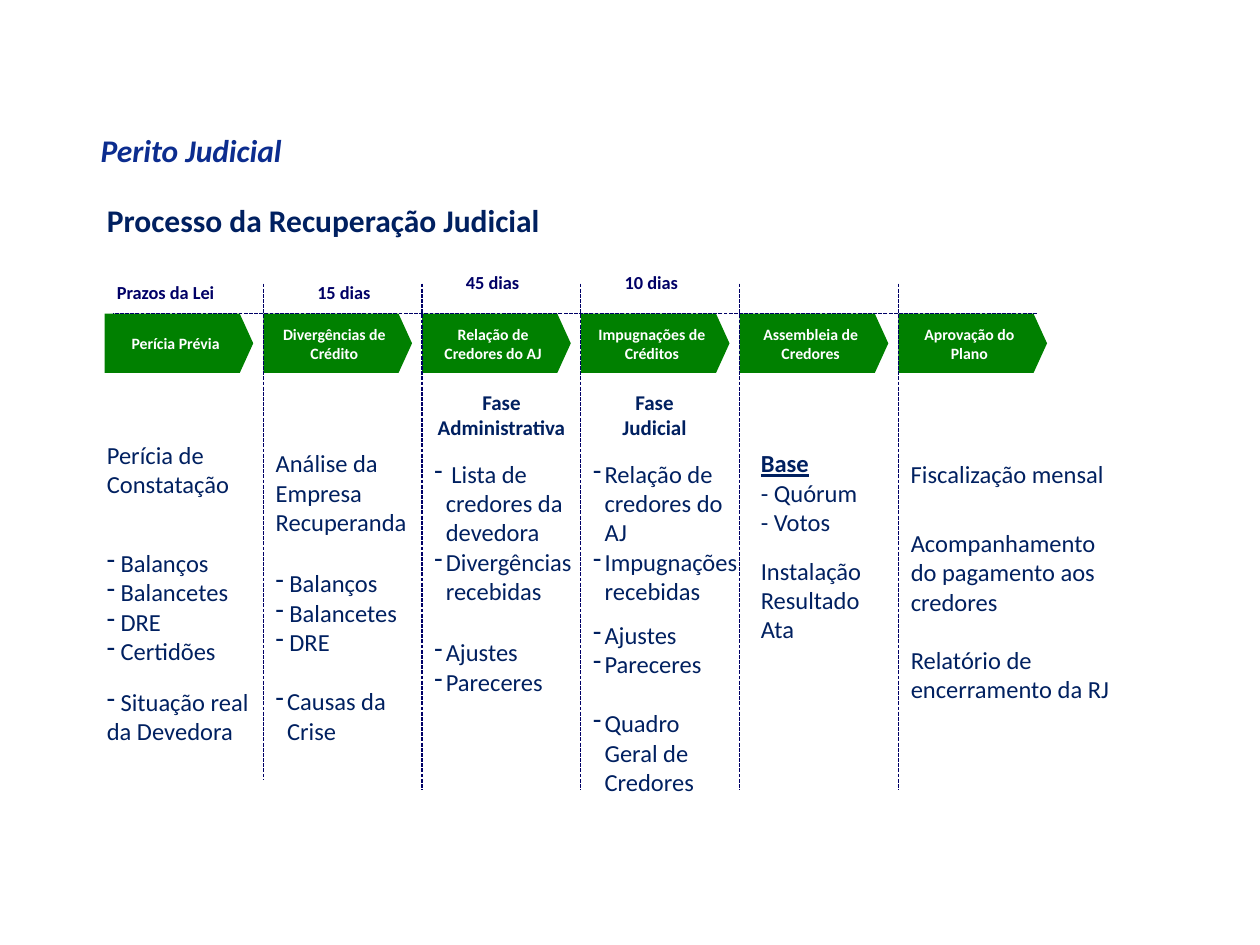
from pptx import Presentation
from pptx.util import Pt
from pptx.dml.color import RGBColor
from pptx.enum.dml import MSO_LINE
from pptx.enum.shapes import MSO_CONNECTOR, MSO_SHAPE
from pptx.enum.text import MSO_ANCHOR, MSO_AUTO_SIZE, PP_ALIGN
from pptx.oxml.ns import qn
from lxml.etree import SubElement

PX = 9144  # 100 px to the inch
STEP = 126
NAVY, DARK, GREEN = "002060", "000066", "008000"

HEAD = dict(size=Pt(18), bold=True)
DAYS = dict(size=Pt(10.5), bold=True)
STAGE = dict(size=Pt(9), bold=True)
PHASE = dict(size=Pt(12), bold=True)
BODY = dict(size=Pt(14))
FLAT, HANG = 0, 9  # hanging indent of dash lists

STEPS = ["Perícia Prévia", "Divergências de Crédito", "Relação de Credores do AJ",
         "Impugnações de Créditos", "Assembleia de Credores", "Aprovação do Plano"]

# x, y, width, height, text
TERMS = [(0, 0, 99, 28, "Prazos da Lei"), (159, 0, 63, 28, "15 dias"),
         (277, -8, 63, 28, "45 dias"), (403, -8, 63, 28, "10 dias")]
PHASES = [(244, 0, 142, 50, "Fase Administrativa"), (393, 0, 87, 50, "Fase Judicial")]

# x, y, width, height, lines, dash indent, line after a gap
NOTES = [
    (-8, 0, 126, 81, ["Perícia de Constatação"], None, None),
    (-8, 86, 134, 104, [" Balanços", " Balancetes", " DRE", " Certidões"], FLAT, None),
    (-8, 196, 134, 81, [" Situação real da Devedora"], FLAT, None),
    (126, 7, 126, 81, ["Análise da Empresa Recuperanda"], None, None),
    (126, 102, 134, 151, [" Balanços", " Balancetes", " DRE", "Causas da Crise"], FLAT, 3),
    (252, 15, 134, 128, [" Lista de credores da devedora", "Divergências recebidas"], HANG, None),
    (252, 157, 134, 57, ["Ajustes", "Pareceres"], HANG, None),
    (378, 15, 142, 128, ["Relação de credores do AJ", "Impugnações recebidas"], HANG, None),
    (378, 143, 134, 151, ["Ajustes", "Pareceres", "Quadro Geral de Credores"], HANG, 2),
    (511, 7, 126, 81, ["Base", "- Quórum", "- Votos"], None, None),
    (511, 92, 126, 81, ["Instalação", "Resultado", "Ata"], None, None),
    (630, 15, 173, 34, ["Fiscalização mensal"], None, None),
    (630, 70, 181, 81, ["Acompanhamento do pagamento aos credores"], None, None),
    (630, 163, 181, 57, ["Relatório de encerramento da RJ"], None, None),
]


def paint(hue):
    return RGBColor.from_string(hue)


def style(font, form, hue):
    for key, val in dict(name="Calibri", **form).items():
        setattr(font, key, val)
    font.color.rgb = paint(hue)


def dash(par, ind):
    prop = par._p.get_or_add_pPr()
    prop.set("marL", str(ind * PX))
    prop.set("indent", str(-ind * PX))
    SubElement(prop, qn("a:buChar")).set("char", "-")


def write(frame, lines, form, hue, align=PP_ALIGN.LEFT, ind=None, gap=None):
    for i, line in enumerate(lines):
        par = frame.add_paragraph() if i else frame.paragraphs[0]
        par.alignment = align
        if i and i == gap:
            par.space_before = Pt(17)
        if ind is not None:
            # the line after a gap always hangs
            dash(par, HANG if i == gap else ind)
        run = par.add_run()
        run.text = line
        style(run.font, form, hue)


def label(slide, box, lines, form, hue, wrap=True, **more):
    frame = slide.shapes.add_textbox(*[n * PX for n in box]).text_frame
    frame.word_wrap = wrap
    frame.auto_size = MSO_AUTO_SIZE.SHAPE_TO_FIT_TEXT
    write(frame, lines, form, hue, **more)
    return frame


def rule(slide, *ends):
    line = slide.shapes.add_connector(MSO_CONNECTOR.STRAIGHT, *[n * PX for n in ends])
    line.line.color.rgb = paint(DARK)
    line.line.width = Pt(0.75)
    line.line.dash_style = MSO_LINE.SQUARE_DOT
    SubElement(line._element.spPr, qn("a:effectLst"))


def titles(slide, x, y):
    label(slide, (x, y, 855, 40), ["Perito Judicial"], dict(HEAD, italic=True), "0C2D8F")
    label(slide, (x + 5, y + 56, 366, 40), ["Processo da Recuperação Judicial"],
          HEAD, NAVY, wrap=False)


def arrows(slide, x, y, w, h):
    for i, name in enumerate(STEPS):
        box = (x + i * STEP, y, w, h)
        shape = slide.shapes.add_shape(MSO_SHAPE.PENTAGON, *[n * PX for n in box])
        shape.shadow.inherit = False
        shape.adjustments[0] = 0.227
        shape.fill.solid()
        shape.fill.fore_color.rgb = paint(GREEN)
        shape.line.fill.background()
        frame = shape.text_frame
        frame.word_wrap = True
        frame.vertical_anchor = MSO_ANCHOR.MIDDLE
        write(frame, [name], STAGE, "FFFFFF", PP_ALIGN.CENTER)


def rules(slide, x, y, w, h):
    rule(slide, x + w, y + 24, x + 7, y + 24)
    for i in range(1, len(STEPS)):
        foot = y + h - (8 if i == 1 else 0)
        rule(slide, x + i * STEP, y, x + i * STEP, foot)


def terms(slide, x, y):
    for dx, dy, w, h, text in TERMS:
        label(slide, (x + dx, y + dy, w, h), [text], DAYS, DARK, wrap=False)


def phases(slide, x, y):
    for dx, dy, w, h, text in PHASES:
        label(slide, (x + dx, y + dy, w, h), [text], PHASE, NAVY, align=PP_ALIGN.CENTER)


def notes(slide, x, y):
    for dx, dy, w, h, lines, ind, gap in NOTES:
        frame = label(slide, (x + dx, y + dy, w, h), lines, BODY, NAVY, ind=ind, gap=gap)
        if lines[0] == "Base":
            style(frame.paragraphs[0].runs[0].font, dict(bold=True, underline=True), NAVY)


def main():
    deck = Presentation()
    deck.slide_width, deck.slide_height = 1000 * PX, 750 * PX
    slide = deck.slides.add_slide(deck.slide_layouts[6])
    titles(slide, 70, 99)
    arrows(slide, 83, 249, 118, 47)
    rules(slide, 83, 225, 740, 402)
    terms(slide, 83, 218)
    phases(slide, 83, 304)
    notes(slide, 83, 344)
    deck.save("out.pptx")


if __name__ == "__main__":
    main()
